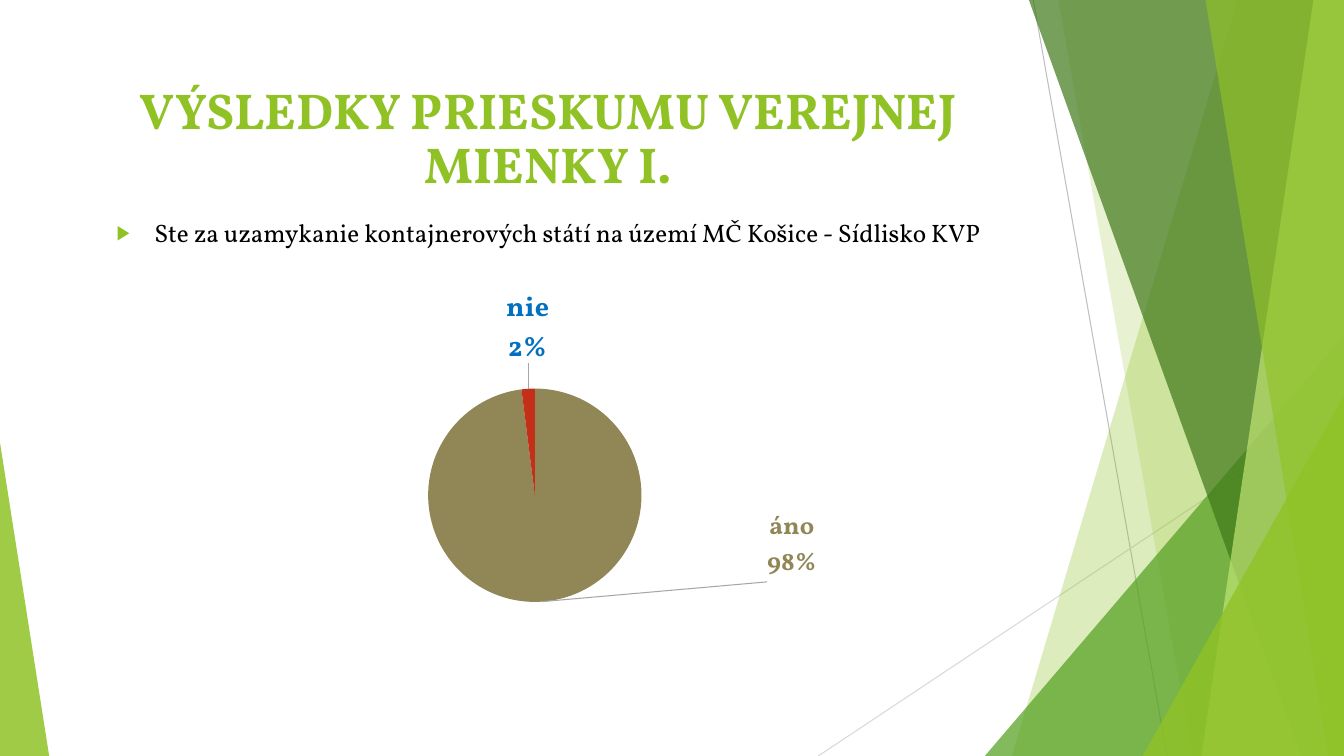
from lxml import etree
from pptx import Presentation
from pptx.chart.data import CategoryChartData
from pptx.dml.color import RGBColor
from pptx.enum.chart import XL_CHART_TYPE
from pptx.enum.shapes import MSO_CONNECTOR, MSO_SHAPE
from pptx.enum.text import MSO_ANCHOR, MSO_AUTO_SIZE, PP_ALIGN
from pptx.oxml import parse_xml
from pptx.oxml.ns import nsdecls, qn
from pptx.util import Cm, Pt

PIE = XL_CHART_TYPE.PIE
STRAIGHT = MSO_CONNECTOR.STRAIGHT
TRIANGLE = MSO_SHAPE.ISOSCELES_TRIANGLE
MIDDLE = MSO_ANCHOR.MIDDLE
NO_AUTOFIT = MSO_AUTO_SIZE.NONE
CENTER = PP_ALIGN.CENTER

LIME = RGBColor(0x90, 0xC2, 0x26)
PALE_LIME = RGBColor(0xC0, 0xE4, 0x74)
GREEN = RGBColor(0x54, 0xA0, 0x21)
DARK_GREEN = RGBColor(0x3F, 0x78, 0x19)
GREY = RGBColor(0xBF, 0xBF, 0xBF)
LIGHT_GREY = RGBColor(0xD9, 0xD9, 0xD9)
BLACK = RGBColor(0, 0, 0)
OLIVE = RGBColor(0x91, 0x86, 0x55)
RED = RGBColor(0xC4, 0x2F, 0x1A)
ORANGE = RGBColor(0xE7, 0x66, 0x18)
BLUE = RGBColor(0x00, 0x70, 0xC0)
SERIF, SANS = "Vollkorn", "Karla"

# Content
TITLE = "VÝSLEDKY PRIESKUMU VEREJNEJ MIENKY I."
QUESTION = "Ste za uzamykanie kontajnerových státí na území MČ Košice - Sídlisko KVP"
ANSWERS = [("áno", 98, OLIVE), ("nie", 2, RED), ("neviem", 0, ORANGE)]
# answer index, shift right and down as parts of the chart, size, colour
LABELS = [(0, 0.28, -0.24, 18, OLIVE), (1, 0, -0.05, 20, BLUE)]

# Geometry in centimetres
WIDTH, HEIGHT = 33.87, 19.05
TITLE_BOX = (1.88, 1.7, 23.88, 3.66)
QUESTION_BOX = (1.88, 5.36, 23.88, 10.77)
CHART_BOX = (2.24, 7.29, 22.5, 10.21)
PIE_LEFT, PIE_TOP, PIE_SIZE = 10.79, 9.79, 5.38
LINES = [(26.04, 0, 29.41, HEIGHT, GREY), (WIDTH, 10.24, 20.62, HEIGHT, LIGHT_GREY)]
# ("band", x at top, x at bottom) reaches the right edge;
# ("corner", left, top, width, apex) stands on the bottom edge
DECORATION = [
    (("band", 31.19, 25.5), LIME, 30),
    (("band", 26.67, 30.05), LIME, 20),
    (("corner", 24.82, 8.46, 9.05, 1), GREEN, 72),
    (("band", 25.93, 32.79), DARK_GREEN, 70),
    (("band", 33.1, 30.28), PALE_LIME, 70),
    (("band", 30.38, 33.48), LIME, 65),
    (("corner", 28.8, 9.98, 5.07, 1), LIME, 80),
    (("corner", 0, 11.15, 1.24, 0), LIME, 85),
]


def lengths(values):
    return [Cm(value) for value in values]


def add_line(slide, x1, y1, x2, y2, color):
    line = slide.shapes.add_connector(STRAIGHT, *lengths((x1, y1, x2, y2)))
    line.line.color.rgb = color
    line.line.width = Pt(0.75)
    etree.SubElement(line.element.spPr, qn("a:effectLst"))


def add_decoration(slide, outline, color, opacity):
    kind, *numbers = outline
    if kind == "band":
        top_x, bottom_x = numbers
        corners = [(WIDTH, 0), (WIDTH, HEIGHT), (bottom_x, HEIGHT)]
        builder = slide.shapes.build_freeform(Cm(top_x), 0)
        builder.add_line_segments([lengths(corner) for corner in corners], close=True)
        shape = builder.convert_to_shape()
    else:
        left, top, width, apex = numbers
        shape = slide.shapes.add_shape(TRIANGLE, *lengths((left, top, width, HEIGHT - top)))
        shape.adjustments[0] = apex
    shape.shadow.inherit = False
    shape.line.fill.background()
    shape.fill.solid()
    shape.fill.fore_color.rgb = color
    color_element = shape.element.spPr.find(qn("a:solidFill"))[0]
    etree.SubElement(color_element, qn("a:alpha"), val=str(opacity * 1000))


def write_text(shape, box, text, size, color, bold=False):
    shape.left, shape.top, shape.width, shape.height = lengths(box)
    frame = shape.text_frame
    frame.word_wrap = True
    frame.auto_size = NO_AUTOFIT
    frame.text = text
    paragraph = frame.paragraphs[0]
    paragraph.alignment = CENTER
    font = paragraph.font
    font.name, font.size, font.bold, font.color.rgb = SERIF, Pt(size), bold, color
    return paragraph


def add_bullet(paragraph):
    properties = paragraph._p.get_or_add_pPr()
    properties.set("marL", str(Cm(0.95)))
    properties.set("indent", str(-Cm(0.95)))
    bullet = parse_xml(
        f'<a:pPr {nsdecls("a")}><a:buClr><a:srgbClr val="{LIME}"/></a:buClr>'
        '<a:buSzPct val="80000"/><a:buFont typeface="Arial"/><a:buChar char="▶"/></a:pPr>')
    for position, element in enumerate(list(bullet)):
        properties.insert(position, element)


def label_xml(index, right, down, size, color):
    return (
        f'<c:dLbl><c:idx val="{index}"/><c:layout><c:manualLayout>'
        f'<c:x val="{right}"/><c:y val="{down}"/></c:manualLayout></c:layout>'
        '<c:numFmt formatCode="0%" sourceLinked="0"/>'
        f'<c:txPr><a:bodyPr/><a:p><a:pPr><a:defRPr sz="{size * 100}" b="1">'
        f'<a:solidFill><a:srgbClr val="{color}"/></a:solidFill><a:latin typeface="{SERIF}"/>'
        '</a:defRPr></a:pPr><a:endParaRPr lang="sk-SK"/></a:p></c:txPr>'
        f'<c:dLblPos val="outEnd"/>{label_content(1)}</c:dLbl>')


def label_content(shown):
    return (
        f'<c:showLegendKey val="0"/><c:showVal val="0"/><c:showCatName val="{shown}"/>'
        f'<c:showSerName val="0"/><c:showPercent val="{shown}"/><c:showBubbleSize val="0"/>'
        '<c:separator>\n</c:separator>')


def add_pie(slide):
    data = CategoryChartData()
    data.categories = [name for name, _, _ in ANSWERS]
    data.add_series("Series 1", [value for _, value, _ in ANSWERS])
    chart = slide.shapes.add_chart(PIE, *lengths(CHART_BOX), data).chart
    chart.has_title = chart.has_legend = False
    chart.font.name, chart.font.size, chart.font.color.rgb = SANS, Pt(10), BLACK
    plot = chart.plots[0]
    plot.vary_by_categories = True
    for index, (_, _, color) in enumerate(ANSWERS):
        fill = plot.series[0].points[index].format.fill
        fill.solid()
        fill.fore_color.rgb = color

    # Labels with leader lines
    labels = "".join(label_xml(*label) for label in LABELS)
    chart.element.xpath(".//c:ser/c:cat")[0].addprevious(parse_xml(
        f'<c:dLbls {nsdecls("c", "a")}>{labels}{label_content(0)}'
        '<c:showLeaderLines val="1"/><c:leaderLines><c:spPr><a:ln w="9525"><a:solidFill>'
        '<a:srgbClr val="A6A6A6"/></a:solidFill></a:ln></c:spPr></c:leaderLines></c:dLbls>'))

    # Place of the pie inside the chart
    left, top, width, height = CHART_BOX
    area = chart.element.xpath(".//c:plotArea")[0]
    for layout in area.findall(qn("c:layout")):
        area.remove(layout)
    area.insert(0, parse_xml(
        f'<c:layout {nsdecls("c")}><c:manualLayout><c:layoutTarget val="inner"/>'
        '<c:xMode val="edge"/><c:yMode val="edge"/>'
        f'<c:x val="{(PIE_LEFT - left) / width:.3f}"/><c:y val="{(PIE_TOP - top) / height:.3f}"/>'
        f'<c:w val="{PIE_SIZE / width:.3f}"/><c:h val="{PIE_SIZE / height:.3f}"/>'
        '</c:manualLayout></c:layout>'))


def main():
    presentation = Presentation()
    presentation.slide_width, presentation.slide_height = lengths((WIDTH, HEIGHT))
    slide = presentation.slides.add_slide(presentation.slide_layouts[5])

    # Background decoration
    for line in LINES:
        add_line(slide, *line)
    for decoration in DECORATION:
        add_decoration(slide, *decoration)

    # Title and question
    title = slide.shapes.title
    heading = write_text(title, TITLE_BOX, TITLE, 36, LIME, bold=True)
    heading.line_spacing = 0.9
    title.text_frame.vertical_anchor = MIDDLE
    question_box = slide.shapes.add_textbox(*lengths(QUESTION_BOX))
    add_bullet(write_text(question_box, QUESTION_BOX, QUESTION, 18, BLACK))

    # Survey result
    add_pie(slide)
    presentation.save("out.pptx")


if __name__ == "__main__":
    main()
